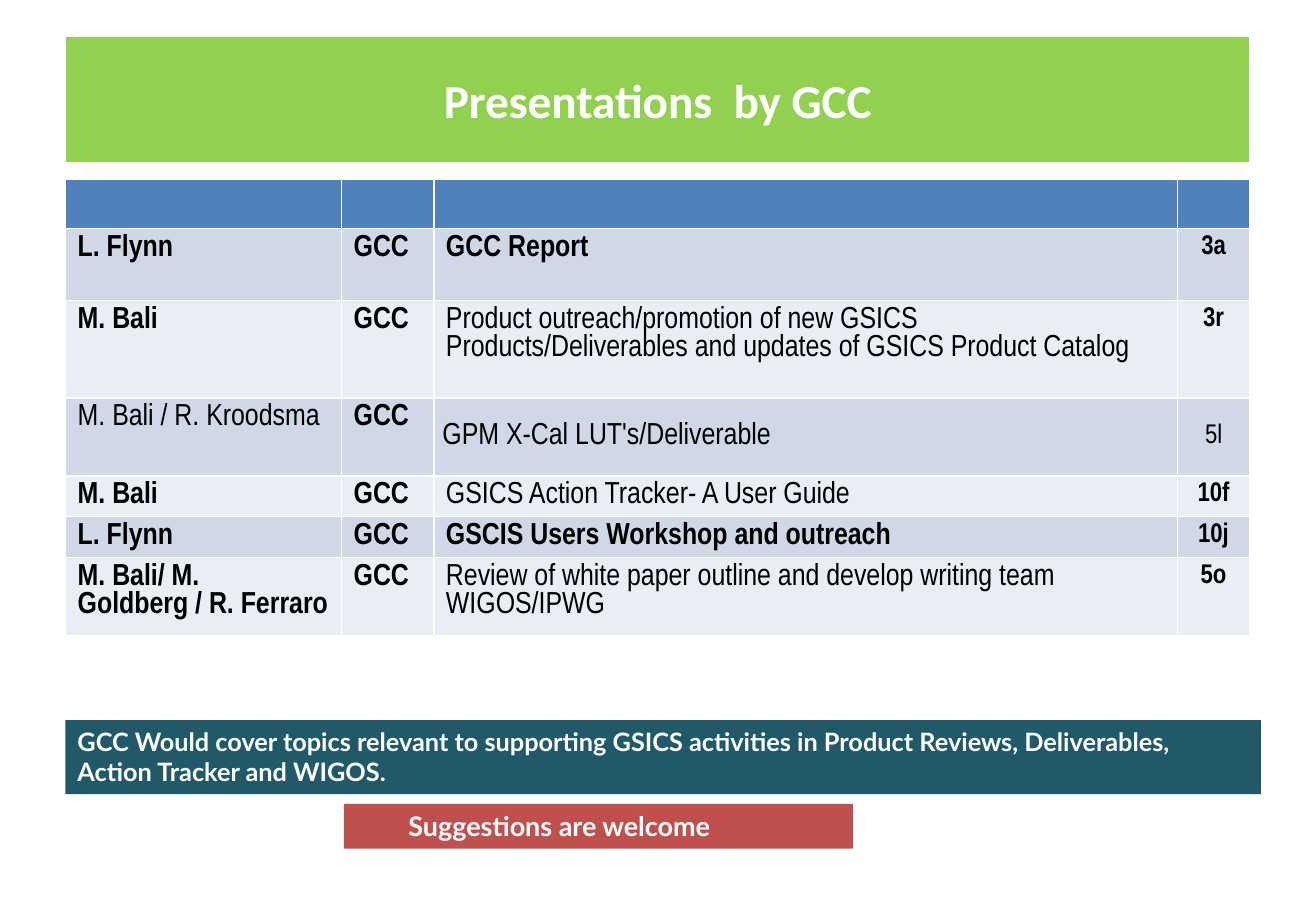
import pptx
import pptx.util
import pptx.dml.color
import pptx.enum.shapes
import pptx.enum.text

Cm = pptx.util.Cm
Align = pptx.enum.text.PP_ALIGN
Anchor = pptx.enum.text.MSO_ANCHOR

LEFT = 1.37
WIDTHS = (5.77, 1.93, 15.54, 1.52)
HEIGHTS = (1.04, 1.5, 2.04, 1.63, 0.82, 0.82, 1.63)
TALKS = (
    ("L. Flynn", "GCC Report", "3a", (True, True, True)),
    ("M. Bali", "Product outreach/promotion of new GSICS Products/Deliverables "
     "and updates of GSICS Product Catalog", "3r", (True, False, True)),
    ("M. Bali / R. Kroodsma", "GPM X-Cal LUT's/Deliverable", "5l",
     (False, False, False)),
    ("M. Bali", "GSICS Action Tracker- A User Guide", "10f", (True, False, True)),
    ("L. Flynn", "GSCIS Users Workshop and outreach", "10j", (True, True, True)),
    ("M. Bali/ M. Goldberg / R. Ferraro", "Review of white paper outline and "
     "develop writing team WIGOS/IPWG", "5o", (True, False, True)),
)
MID_ROW = 3


def color(code):
    return pptx.dml.color.RGBColor.from_string(code)


def paint(item, code):
    item.fill.solid()
    item.fill.fore_color.rgb = color(code)


def write(frame, text, size=18, font="Arial Narrow", ink="000000", bold=True,
          align=Align.LEFT):
    para = frame.paragraphs[0]
    para.alignment = align
    run = para.add_run()
    run.text = text
    run.font.size = pptx.util.Pt(size)
    run.font.name = font
    run.font.bold = bold
    run.font.color.rgb = color(ink)


def add_title(slide, text):
    title = slide.shapes.title
    title.left, title.top = Cm(LEFT), Cm(0.76)
    title.width, title.height = Cm(sum(WIDTHS)), Cm(2.64)
    paint(title, "92D050")
    title.line.color.rgb = color("FFFFFF")
    title.line.width = pptx.util.Pt(0.75)
    title.text_frame.vertical_anchor = Anchor.MIDDLE
    write(title.text_frame, text, size=28, font="Calibri", ink="FFFFFF",
          align=Align.CENTER)


def add_talks(slide):
    frame = slide.shapes.add_table(
        len(HEIGHTS), len(WIDTHS), Cm(LEFT), Cm(3.74),
        Cm(sum(WIDTHS)), Cm(sum(HEIGHTS)))
    table = frame.table
    for col, width in zip(table.columns, WIDTHS):
        col.width = Cm(width)
    for row, height in zip(table.rows, HEIGHTS):
        row.height = Cm(height)
    for cell in table.rows[0].cells:
        paint(cell, "4F81BD")
    for num, (name, topic, item, bolds) in enumerate(TALKS, 1):
        cells = table.rows[num].cells
        for cell in cells:
            paint(cell, "D0D8E8" if num % 2 else "E9EDF4")
        write(cells[0].text_frame, name, bold=bolds[0])
        write(cells[1].text_frame, "GCC")
        write(cells[2].text_frame, topic, bold=bolds[1])
        write(cells[3].text_frame, item, size=16, bold=bolds[2],
              align=Align.CENTER)
    for col, inset in ((2, 0.18), (3, 0.05)):
        cell = table.cell(MID_ROW, col)
        cell.vertical_anchor = Anchor.MIDDLE
        cell.margin_left, cell.margin_right = Cm(inset), Cm(0.05)
        cell.margin_top = cell.margin_bottom = Cm(0)


def add_note(slide, text, left, top, width, height, fill, size, inset=0.25):
    note = slide.shapes.add_shape(
        pptx.enum.shapes.MSO_SHAPE.RECTANGLE,
        Cm(left), Cm(top), Cm(width), Cm(height))
    note.shadow.inherit = False
    paint(note, fill)
    note.line.fill.background()
    frame = note.text_frame
    frame.word_wrap = True
    frame.vertical_anchor = Anchor.TOP
    frame.margin_left = Cm(inset)
    write(frame, text, size=size, font="Lato", ink="FFFFFF")


def main():
    deck = pptx.Presentation()
    deck.slide_width, deck.slide_height = Cm(27.51), Cm(19.05)
    slide = deck.slides.add_slide(deck.slide_layouts[5])
    add_title(slide, "Presentations  by GCC")
    add_talks(slide)
    add_note(slide, "GCC Would cover topics relevant to supporting GSICS "
             "activities in Product Reviews, Deliverables, Action Tracker and "
             "WIGOS.", LEFT, 15.06, 24.99, 1.55, "215968", 15)
    add_note(slide, "Suggestions are welcome", 7.19, 16.81, 10.64, 0.94,
             "C0504D", 16, inset=1.35)
    deck.save("out.pptx")


if __name__ == "__main__":
    main()
